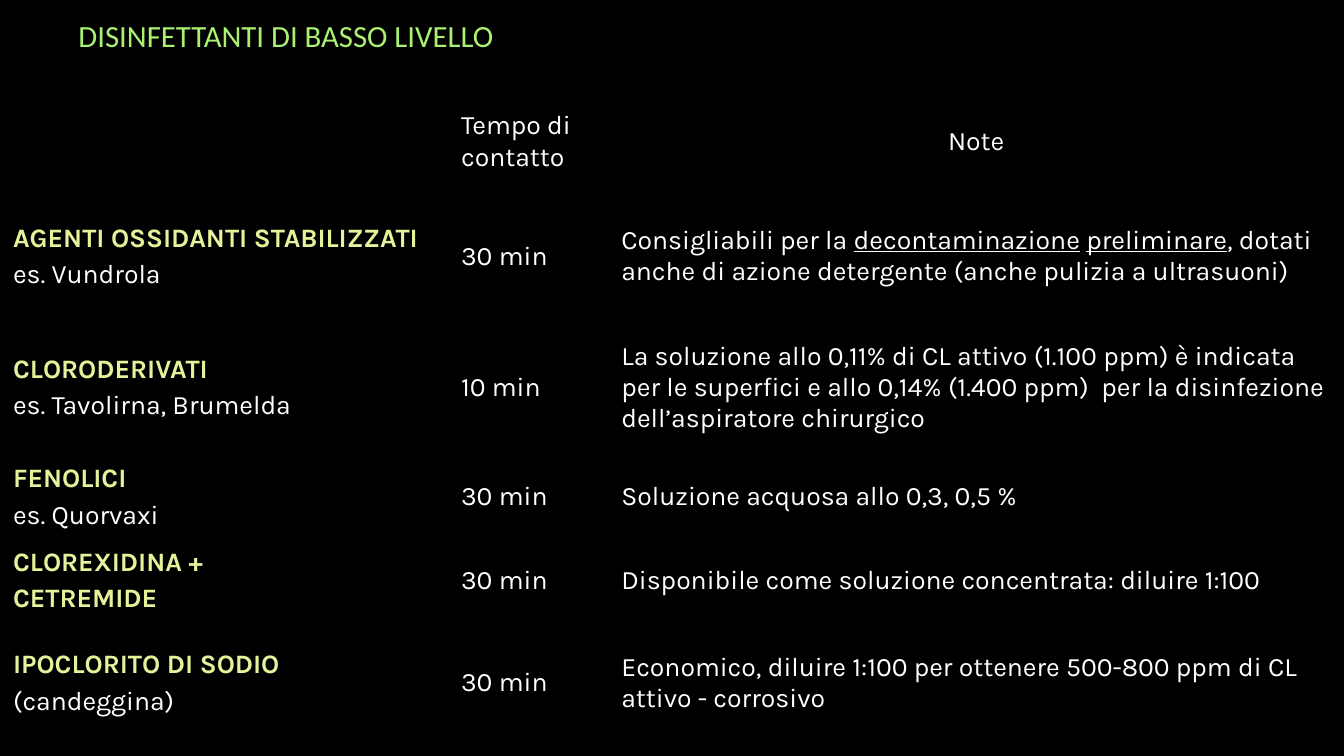
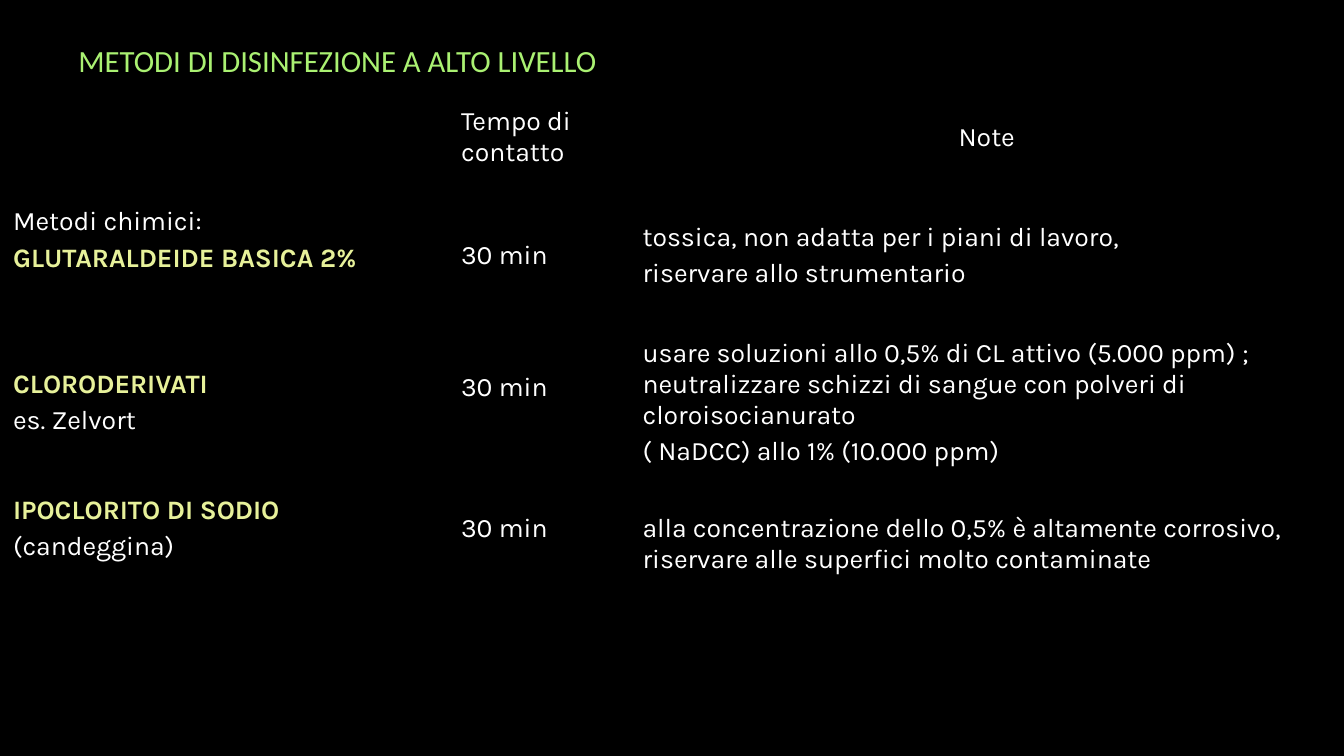
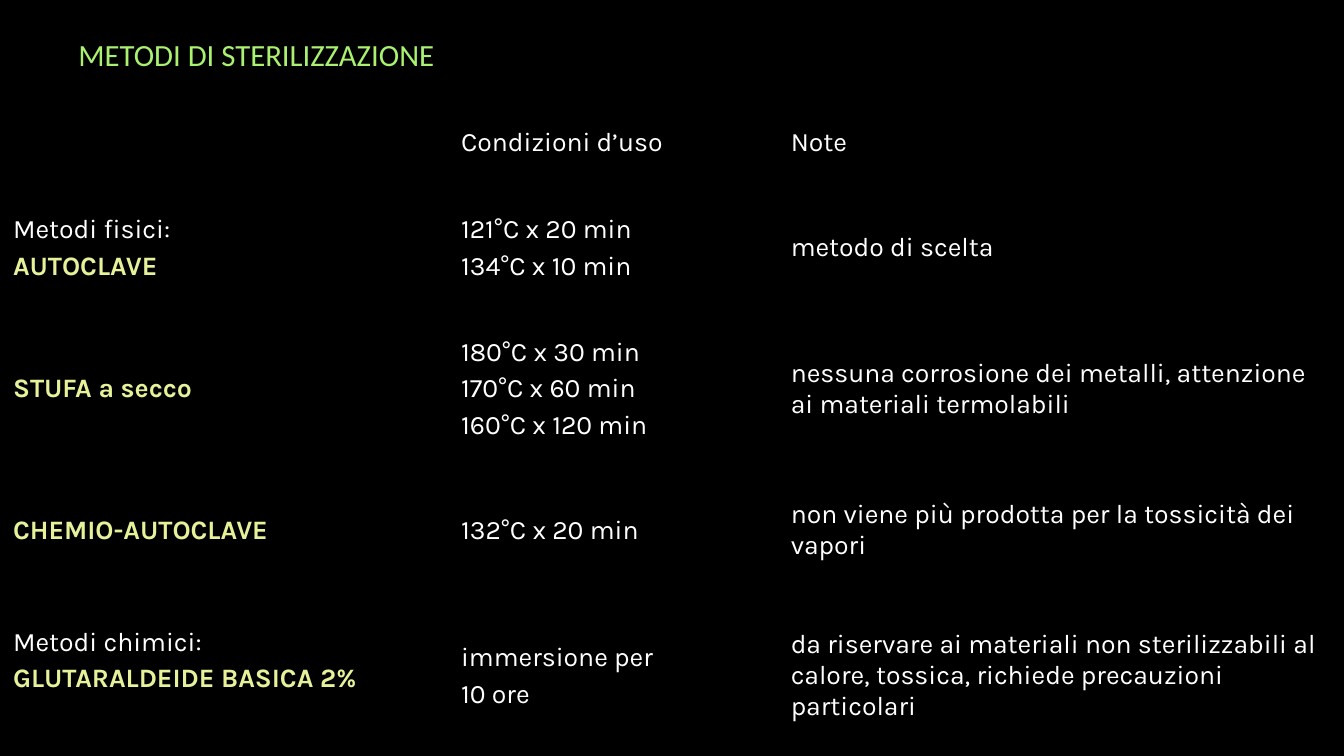
import pptx
import pptx.util
import pptx.dml.color
import pptx.enum.text
import pptx.oxml.ns

Inches, Pt = pptx.util.Inches, pptx.util.Pt
ALIGN = pptx.enum.text.PP_ALIGN
MIDDLE = pptx.enum.text.MSO_ANCHOR.MIDDLE

WIDTH, HEIGHT = 13.33, 7.5
FIRST_COLUMN = WIDTH / 3
BLACK, WHITE, LIME, YELLOW = "000000", "FFFFFF", "AAF172", "E7F19A"
TITLE_FONT, BODY_FONT = "Calibri", "Karla"
NO_STYLE_NO_GRID = "{2D5ABB26-0587-4C30-8999-92F81FD0307C}"
HEAD, UNDERLINE, RAISED = "*", "_", "^"  # marks used in cell text

LOW_LEVEL = [
    ["", "Tempo di contatto", "Note"],
    ["*AGENTI OSSIDANTI STABILIZZATI\nes. Vundrola", "30 min",
     "Consigliabili per la _decontaminazione_ _preliminare_, dotati anche di "
     "azione detergente (anche pulizia a ultrasuoni)"],
    ["*CLORODERIVATI\nes. Tavolirna, Brumelda", "10 min",
     "La soluzione allo 0,11% di CL attivo (1.100 ppm) è indicata per le "
     "superfici e allo 0,14% (1.400 ppm)  per la disinfezione "
     "dell’aspiratore chirurgico"],
    ["*FENOLICI\nes. Quorvaxi", "30 min", "Soluzione acquosa allo 0,3, 0,5 %"],
    ["*CLOREXIDINA +\n*CETREMIDE", "30 min",
     "Disponibile come soluzione concentrata: diluire 1:100"],
    ["*IPOCLORITO DI SODIO\n(candeggina)", "30 min",
     "Economico, diluire 1:100 per ottenere 500-800 ppm di CL attivo - corrosivo"],
]
HIGH_LEVEL = [
    ["", "Tempo di contatto", "Note"],
    ["^Metodi chimici:\n*GLUTARALDEIDE BASICA 2%", "30 min",
     "tossica, non adatta per i piani di lavoro,\nriservare allo strumentario"],
    ["*CLORODERIVATI\nes. Zelvort", "^30 min",
     "usare soluzioni allo 0,5% di CL attivo (5.000 ppm) ; neutralizzare "
     "schizzi di sangue con polveri di cloroisocianurato\n"
     "( NaDCC) allo 1% (10.000 ppm)"],
    ["^*IPOCLORITO DI SODIO\n(candeggina)", "^30 min",
     "alla concentrazione dello 0,5% è altamente corrosivo, riservare alle "
     "superfici molto contaminate"],
]
STERILIZATION = [
    ["", "Condizioni d’uso", "Note"],
    ["Metodi fisici:\n*AUTOCLAVE", "121°C x 20 min\n134°C x 10 min",
     "metodo di scelta"],
    ["*STUFA a secco", "180°C x 30 min\n170°C x 60 min\n160°C x 120 min",
     "nessuna corrosione dei metalli, attenzione ai materiali termolabili"],
    ["*CHEMIO-AUTOCLAVE", "132°C x 20 min",
     "non viene più prodotta per la tossicità dei vapori"],
    ["^Metodi chimici:\n*GLUTARALDEIDE BASICA 2%", "immersione per\n10 ore",
     "da riservare ai materiali non sterilizzabili al calore, tossica, "
     "richiede precauzioni particolari"],
]


def rgb(color):
    return pptx.dml.color.RGBColor.from_string(color)


def format_run(r, font, size, color, bold=False):
    r.font.name = font
    r.font.size = Pt(size)
    r.font.color.rgb = rgb(color)
    r.font.bold = bold


def add_title(s, text, top, height):
    sp = s.shapes.add_textbox(Inches(0.68), Inches(top),
                              Inches(WIDTH * 0.9), Inches(height))
    tf = sp.text_frame
    tf.word_wrap = True
    tf.vertical_anchor = MIDDLE
    tf.text = text
    format_run(tf.paragraphs[0].runs[0], TITLE_FONT, 22, LIME)


def fill_cell(cell, text, align):
    """Write marked text: ^ raises the cell, * heads a line, _ underlines."""
    cell.fill.background()
    cell.vertical_anchor = MIDDLE
    cell.margin_left = cell.margin_right = Inches(0.13)
    cell.margin_top = Inches(0.05)
    cell.margin_bottom = Inches(0.35 if text.startswith(RAISED) else 0.05)
    tf = cell.text_frame
    for i, line in enumerate(text.removeprefix(RAISED).split("\n")):
        p = tf.add_paragraph() if i else tf.paragraphs[0]
        p.alignment = align
        if i:
            p.space_before = Pt(4)
        bold = line.startswith(HEAD)
        for j, part in enumerate(line.removeprefix(HEAD).split(UNDERLINE)):
            if part:
                r = p.add_run()
                r.text = part
                format_run(r, BODY_FONT, 19, YELLOW if bold else WHITE, bold)
                if j % 2:
                    r.font.underline = True


def add_grid(s, rows, top, heights, middle_width, aligns, note_align):
    """Add a full-width table; note_align applies to the last header cell."""
    widths = [FIRST_COLUMN, middle_width, WIDTH - FIRST_COLUMN - middle_width]
    frame = s.shapes.add_table(len(rows), len(widths), 0, Inches(top),
                               Inches(WIDTH), Inches(sum(heights)))
    table = frame.table
    table.first_row = table.horz_banding = False
    for style in frame.element.iter(pptx.oxml.ns.qn("a:tableStyleId")):
        style.text = NO_STYLE_NO_GRID
    for column, width in zip(table.columns, widths):
        column.width = Inches(width)
    for i, (texts, height) in enumerate(zip(rows, heights)):
        table.rows[i].height = Inches(height)
        row_aligns = aligns if i else [*aligns[:2], note_align]
        for j, (text, align) in enumerate(zip(texts, row_aligns)):
            fill_cell(table.cell(i, j), text, align)


def main():
    prs = pptx.Presentation()
    prs.slide_width, prs.slide_height = Inches(WIDTH), Inches(HEIGHT)
    fill = prs.slide_master.background.fill
    fill.solid()
    fill.fore_color.rgb = rgb(BLACK)

    left = [ALIGN.LEFT] * 3
    justified = [ALIGN.JUSTIFY, ALIGN.JUSTIFY, ALIGN.LEFT]
    slides = [
        (("DISINFETTANTI DI BASSO LIVELLO", 0, 0.69),
         (LOW_LEVEL, 0.88, [1.05, 1.23, 1.37, 0.8, 0.86, 1.17], 1.59,
          left, ALIGN.CENTER)),
        (("METODI DI DISINFEZIONE A ALTO LIVELLO", 0.21, 0.77),
         (HIGH_LEVEL, 0.94, [0.85, 1.49, 1.43, 1.37], 1.8,
          left, ALIGN.CENTER)),
        (("METODI DI STERILIZZAZIONE", 0, 1.07),
         (STERILIZATION, 1.07, [0.69, 1.4, 1.4, 1.4, 1.49], 3.27,
          justified, ALIGN.JUSTIFY)),
    ]
    for title, grid in slides:
        s = prs.slides.add_slide(prs.slide_layouts[6])
        add_title(s, *title)
        add_grid(s, *grid)
    prs.save("out.pptx")


if __name__ == "__main__":
    main()
